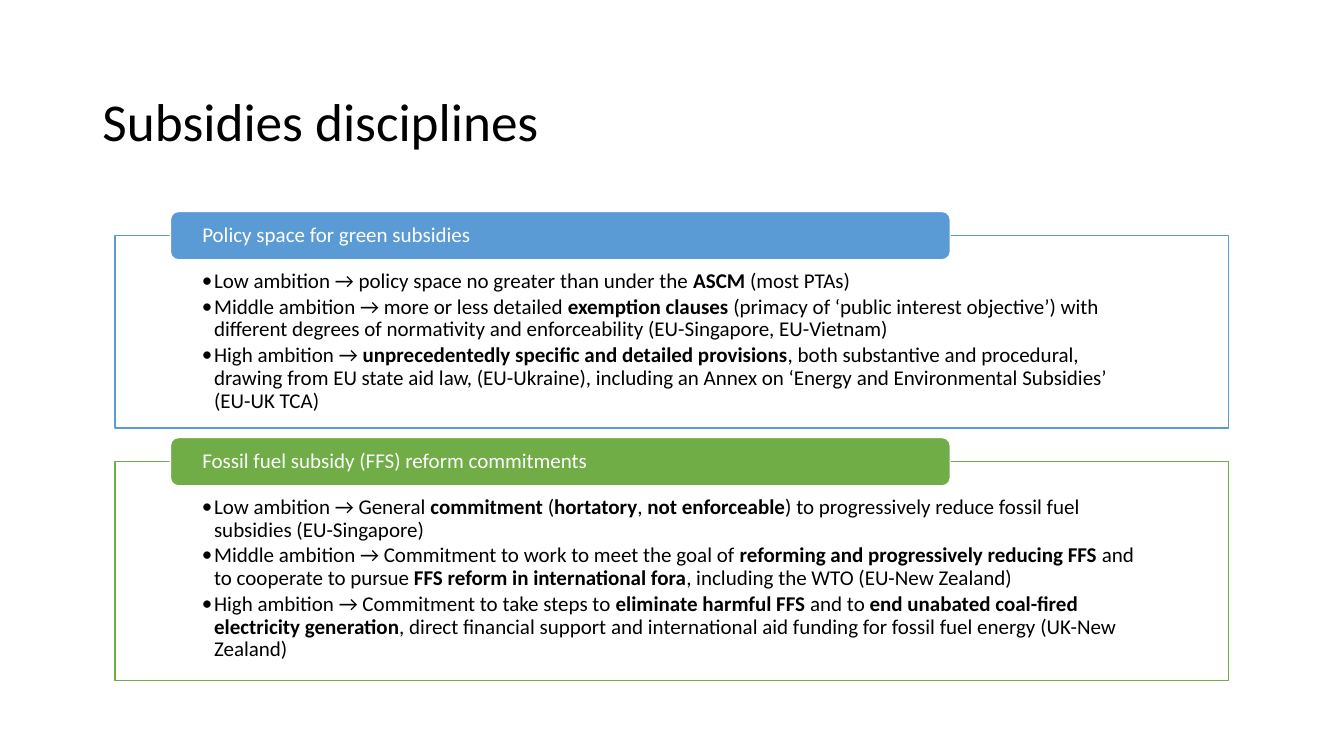
from dataclasses import dataclass

from lxml.etree import SubElement as add_sub
from pptx import Presentation
from pptx.dml.color import RGBColor
from pptx.enum.shapes import MSO_SHAPE as Kind
from pptx.enum.text import MSO_ANCHOR as Anchor, PP_ALIGN as Align
from pptx.oxml.ns import qn
from pptx.util import Inches, Pt

WIDE, HIGH = Inches(13.33), Inches(7.5)
FONT, SIZE = "Calibri", 15
WHITE, BLACK = "FFFFFF", "000000"

# Panel layout on a grid of 100 columns by 100 rows
LEFT, SPAN = 8.55, 82.88
TOP, GAP = 31.17, 4.43
TAB_LEFT, TAB_SPAN, TAB_TALL = 12.68, 58.03, 6.4
HANG = 0.9


@dataclass
class Panel:
    head: str
    hue: str
    tall: float
    items: list[str]  # asterisks enclose bold words


PANELS = [
    Panel("Policy space for green subsidies", "5B9BD5", 25.47, [
        "Low ambition → policy space no greater than under the *ASCM* (most PTAs)",
        "Middle ambition → more or less detailed *exemption clauses *(primacy of "
        "‘public interest objective’) with different degrees of normativity and "
        "enforceability (EU-Singapore, EU-Vietnam)",
        "High ambition → *unprecedentedly specific and detailed provisions*, both "
        "substantive and procedural, drawing from EU state aid law, (EU-Ukraine), "
        "including an Annex on ‘Energy and Environmental Subsidies’ (EU-UK TCA)",
    ]),
    Panel("Fossil fuel subsidy (FFS) reform commitments", "70AD47", 28.93, [
        "Low ambition → General *commitment* (*hortatory*, *not enforceable*) to "
        "progressively reduce fossil fuel subsidies (EU-Singapore)",
        "Middle ambition → Commitment to work to meet the goal of *reforming and "
        "progressively reducing FFS *and to cooperate to pursue *FFS reform in "
        "international fora*, including the WTO (EU-New Zealand)",
        "High ambition → Commitment to take steps to *eliminate harmful FFS *and "
        "to *end unabated coal-fired electricity generation*, direct financial "
        "support and international aid funding for fossil fuel energy "
        "(UK-New Zealand)",
    ]),
]


def col(n: float) -> int:
    return round(WIDE * n / 100)


def row(n: float) -> int:
    return round(HIGH * n / 100)


def paint(target, hue: str) -> None:
    """Give a fill or a font a solid colour."""
    if hasattr(target, "solid"):
        target.solid()
        target.fore_color.rgb = RGBColor.from_string(hue)
    else:
        target.color.rgb = RGBColor.from_string(hue)


def add_box(slide, kind: Kind, x: float, y: float, w: float, h: float,
            fill: str, line: str):
    box = slide.shapes.add_shape(kind, col(x), row(y), col(w), row(h))
    box.shadow.inherit = False
    paint(box.fill, fill)
    paint(box.line.fill, line)
    box.line.width = Pt(1)
    return box


def set_frame(frame, anchor: Anchor, side: float, top: float, base: float) -> None:
    frame.word_wrap = True
    frame.vertical_anchor = anchor
    frame.margin_left = frame.margin_right = col(side)
    frame.margin_top, frame.margin_bottom = row(top), row(base)


def write(para, text: str, size: float, hue: str, after: float = 0) -> None:
    para.alignment = Align.LEFT
    para.line_spacing = 0.9
    para.space_after = Pt(after)
    para.font.name, para.font.size = FONT, Pt(size)
    paint(para.font, hue)
    for i, part in enumerate(text.split("*")):
        run = para.add_run()
        run.text = part
        if i % 2:
            run.font.bold = True


def add_bullet(para) -> None:
    props = para._p.get_or_add_pPr()
    props.set("marL", str(col(HANG)))
    props.set("indent", str(-col(HANG)))
    for tag, attrs in (("a:buFont", {"typeface": FONT}), ("a:buChar", {"char": "•"})):
        mark = props.makeelement(qn(tag), attrs)
        props.insert_element_before(mark, "a:tabLst", "a:defRPr", "a:extLst")
    # The bullet takes its size from the runs and the paragraph end
    for run in para.runs:
        run.font.size = Pt(SIZE)
    add_sub(para._p, qn("a:endParaRPr"), sz=str(SIZE * 100))


def add_panel(slide, panel: Panel, top: float) -> None:
    # Outlined body with bullets
    body = add_box(slide, Kind.RECTANGLE, LEFT, top, SPAN, panel.tall,
                   WHITE, panel.hue)
    tint = body.fill._xPr.find(qn("a:solidFill"))[0]
    add_sub(tint, qn("a:alpha"), val="90000")
    frame = body.text_frame
    set_frame(frame, Anchor.TOP, 6.48, 4.56, 1.6)
    for i, item in enumerate(panel.items):
        para = frame.add_paragraph() if i else frame.paragraphs[0]
        write(para, item, SIZE, BLACK, SIZE * 0.15)
        add_bullet(para)

    # Heading tab across the top edge
    tab = add_box(slide, Kind.ROUNDED_RECTANGLE, TAB_LEFT, top - TAB_TALL / 2,
                  TAB_SPAN, TAB_TALL, panel.hue, WHITE)
    set_frame(tab.text_frame, Anchor.MIDDLE, 2.2, 0, 0)
    write(tab.text_frame.paragraphs[0], panel.head, SIZE, WHITE)


def main() -> None:
    deck = Presentation()
    deck.slide_width, deck.slide_height = WIDE, HIGH
    slide = deck.slides.add_slide(deck.slide_layouts[6])

    # Panels stacked downwards
    top = TOP
    for panel in PANELS:
        add_panel(slide, panel, top)
        top += panel.tall + GAP

    # Title
    title = slide.shapes.add_textbox(col(6.87), row(8.13), col(86.25), row(16.53))
    set_frame(title.text_frame, Anchor.MIDDLE, 0.75, 0.67, 0.67)
    write(title.text_frame.paragraphs[0], "Subsidies disciplines", 38, BLACK)

    deck.save("out.pptx")


if __name__ == "__main__":
    main()
